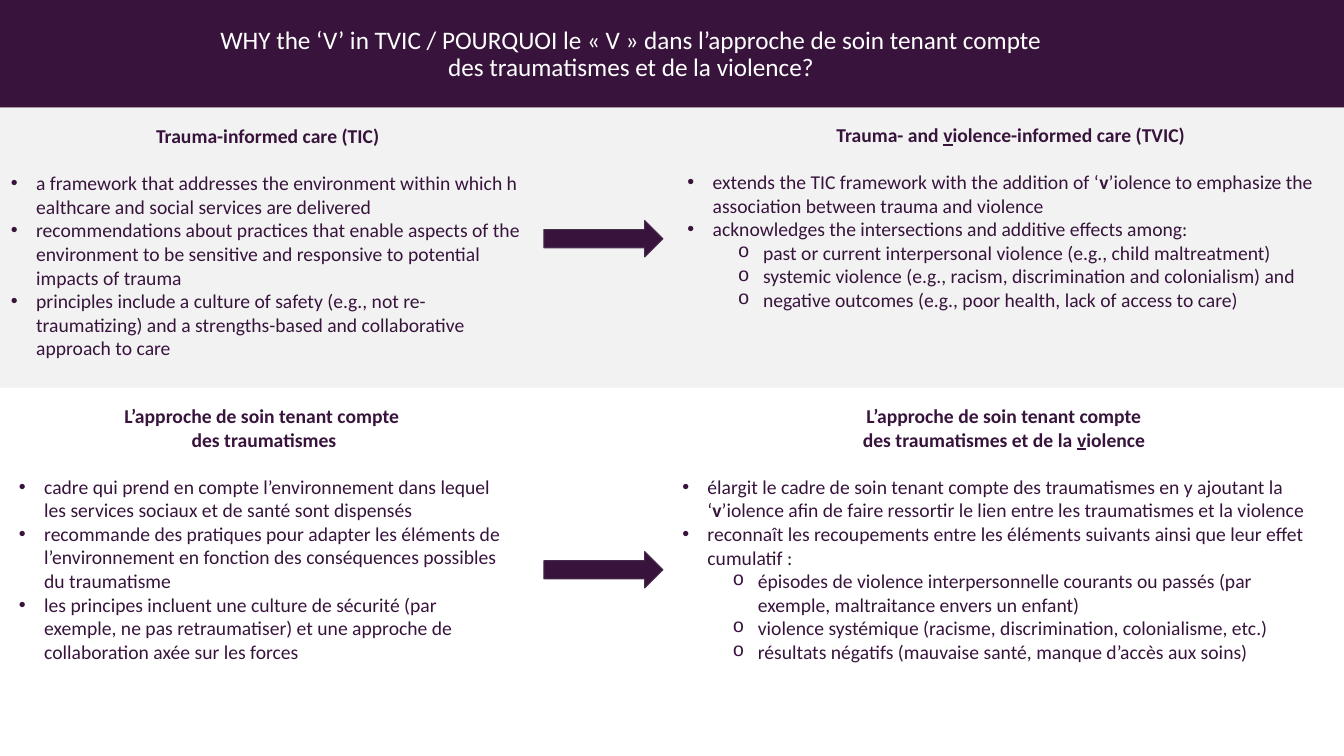
from lxml.etree import SubElement
from pptx import Presentation
from pptx.dml.color import RGBColor
from pptx.enum.shapes import MSO_SHAPE as Shape
from pptx.enum.text import MSO_ANCHOR as Anchor, PP_ALIGN as Align
from pptx.oxml.ns import qn
from pptx.util import Pt

COLORS = {"plum": "38143D", "outline": "462B4A", "band": "F2F2F2", "white": "FFFFFF"}
FONT = "Calibri"
WIDTH, HEIGHT = 960, 540
BANNER_HEIGHT, BAND_HEIGHT = 77, 200
BULLETS = [("•", "Arial"), ("o", "Courier New")]  # by level

TITLE = ("WHY the ‘V’ in TVIC / POURQUOI le « V » dans l’approche de soin tenant compte "
         "des traumatismes et de la violence?")

# Text between bars is emphasised: underlined in headings, bold in items.
PANELS = [
    {"box": (0.75, 85, 381, 200),
     "heading": "Trauma-informed care (TIC)",
     "items": [
         (0, "a framework that addresses the environment within which h\tealthcare and social "
             "services are delivered"),
         (0, "recommendations about practices that enable aspects of the environment to be "
             "sensitive and responsive to potential impacts of trauma"),
         (0, "principles include a culture of safety (e.g., not re-traumatizing) and a "
             "strengths-based and collaborative approach to care")]},
    {"box": (484, 84.25, 476, 200),
     "heading": "Trauma- and |v|iolence-informed care (TVIC)",
     "items": [
         (0, "extends the TIC framework with the addition of ‘|v|’iolence to emphasize the "
             "association between trauma and violence"),
         (0, "acknowledges the intersections and additive effects among:"),
         (1, "past or current interpersonal violence (e.g., child maltreatment)"),
         (1, "systemic violence (e.g., racism, discrimination and colonialism) and"),
         (1, "negative outcomes (e.g., poor health, lack of access to care)")]},
    {"box": (6.5, 285, 364.25, 128),
     "heading": "L’approche de soin tenant compte \ndes traumatismes",
     "items": [
         (0, "cadre qui prend en compte l’environnement dans lequel les services sociaux et "
             "de santé sont dispensés"),
         (0, "recommande des pratiques pour adapter les éléments de l’environnement en "
             "fonction des conséquences possibles du traumatisme"),
         (0, "les principes incluent une culture de sécurité (par exemple, ne pas "
             "retraumatiser) et une approche de collaboration axée sur les forces")]},
    {"box": (480.25, 285, 473.75, 195),
     "heading": "L’approche de soin tenant compte\ndes traumatismes et de la |v|iolence",
     "items": [
         (0, "élargit le cadre de soin tenant compte des traumatismes en y ajoutant la "
             "‘|v|’iolence afin de faire ressortir le lien entre les traumatismes et la violence"),
         (0, "reconnaît les recoupements entre les éléments suivants ainsi que leur effet "
             "cumulatif :"),
         (1, "épisodes de violence interpersonnelle courants ou passés (par exemple, "
             "maltraitance envers un enfant)"),
         (1, "violence systémique (racisme, discrimination, colonialisme, etc.)"),
         (1, "résultats négatifs (mauvaise santé, manque d’accès aux soins)")]},
]
ARROW_TOPS = [157.5, 394]


def color(name):
    return RGBColor.from_string(COLORS[name])


def add_filled(slide, preset, box, fill, outline=None):
    shape = slide.shapes.add_shape(preset, *map(Pt, box))
    shape.shadow.inherit = False
    shape.fill.solid()
    shape.fill.fore_color.rgb = color(fill)
    if outline:
        shape.line.color.rgb = color(outline)
        shape.line.width = Pt(0)
    else:
        shape.line.fill.background()
    return shape


def set_font(paragraph, size, color_name, bold=False):
    font = paragraph.font
    font.name, font.size, font.bold = FONT, Pt(size), bold
    font.color.rgb = color(color_name)


def add_marked_text(paragraph, text, emphasis):
    """Write runs and line breaks; parts between bars get the named emphasis."""
    for part_index, part in enumerate(text.split("|")):
        for line_index, line in enumerate(part.split("\n")):
            if line_index:
                paragraph.add_line_break()
            run = paragraph.add_run()
            run.text = line
            if part_index % 2:
                setattr(run.font, emphasis, True)


def add_bullet(paragraph, level):
    character, typeface = BULLETS[level]
    paragraph.level = level
    properties = paragraph._p.get_or_add_pPr()
    properties.set("marL", str(Pt(18 + 36 * level)))
    properties.set("indent", str(Pt(-18)))
    SubElement(properties, qn("a:buFont"), typeface=typeface)
    SubElement(properties, qn("a:buChar"), char=character)


def add_panel(slide, panel):
    frame = slide.shapes.add_textbox(*map(Pt, panel["box"])).text_frame
    frame.word_wrap = True
    heading = frame.paragraphs[0]
    heading.alignment = Align.CENTER
    heading.space_after = Pt(17)
    set_font(heading, 14, "plum", bold=True)
    add_marked_text(heading, panel["heading"], "underline")
    for level, text in panel["items"]:
        paragraph = frame.add_paragraph()
        add_bullet(paragraph, level)
        set_font(paragraph, 14, "plum")
        add_marked_text(paragraph, text, "bold")


def set_title(slide):
    title = slide.shapes.title
    title.left, title.top, title.width, title.height = map(Pt, (144.75, 0, 612, 78.5))
    frame = title.text_frame
    frame.text = TITLE
    frame.word_wrap = True
    frame.vertical_anchor = Anchor.MIDDLE
    paragraph = frame.paragraphs[0]
    paragraph.alignment = Align.CENTER
    paragraph.line_spacing = 0.9
    set_font(paragraph, 18, "white")


def main():
    presentation = Presentation()
    presentation.slide_width, presentation.slide_height = Pt(WIDTH), Pt(HEIGHT)
    slide = presentation.slides.add_slide(presentation.slide_layouts[5])
    set_title(slide)
    for top, height, fill in [(0, BANNER_HEIGHT, "plum"), (BANNER_HEIGHT, BAND_HEIGHT, "band")]:
        background = add_filled(slide, Shape.RECTANGLE, (0, top, WIDTH, height), fill)
        slide.shapes.title.element.addprevious(background.element)
    for panel in PANELS:
        add_panel(slide, panel)
    for top in ARROW_TOPS:
        add_filled(slide, Shape.RIGHT_ARROW, (388.5, top, 85, 26), "plum", "outline")
    presentation.save("out.pptx")


if __name__ == "__main__":
    main()
